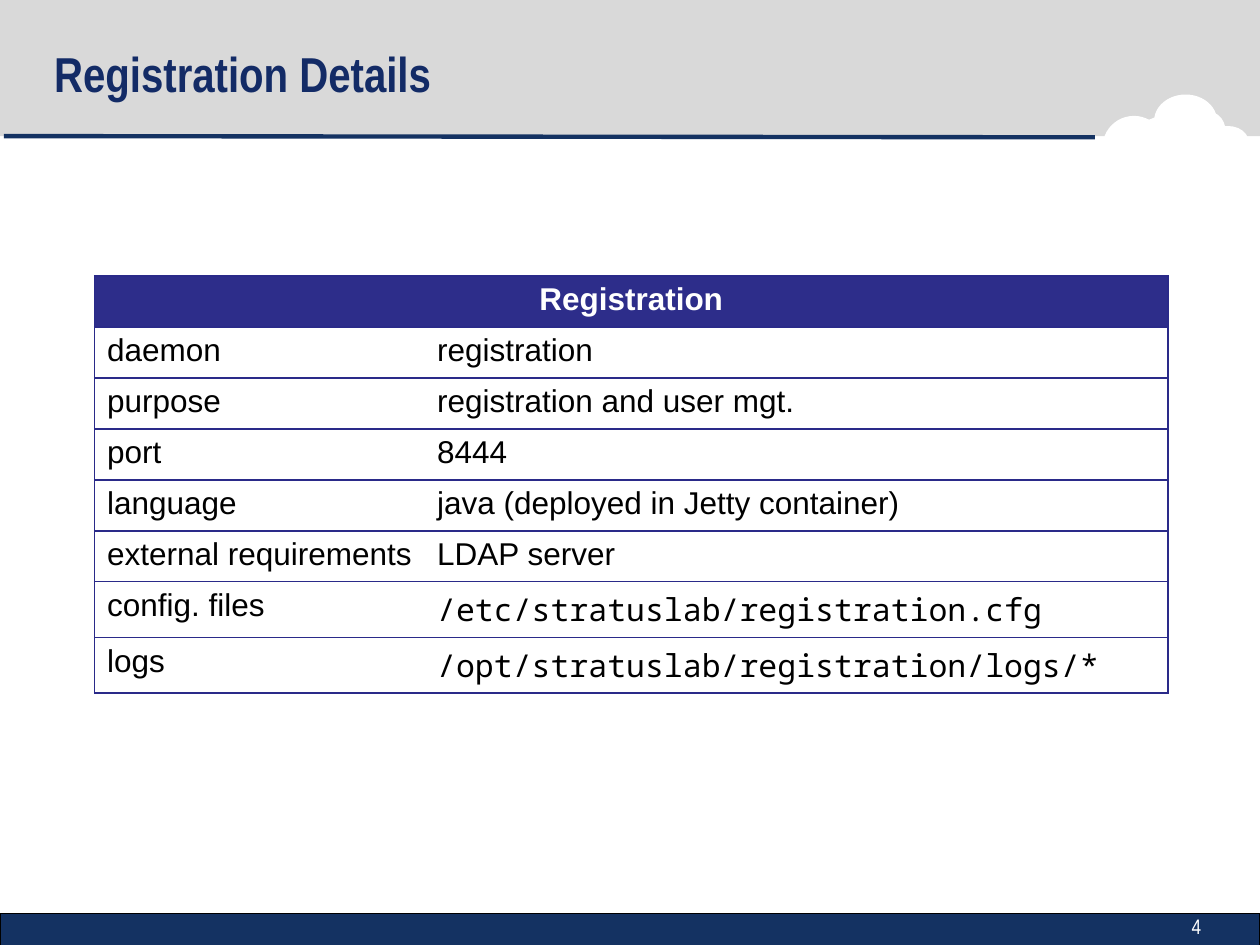
from lxml.etree import SubElement
from pptx import Presentation
from pptx.dml.color import RGBColor
from pptx.enum.shapes import MSO_CONNECTOR, MSO_SHAPE
from pptx.enum.text import MSO_ANCHOR, PP_ALIGN
from pptx.oxml.ns import qn
from pptx.util import Inches, Pt

COLORS = {
    "band": "D9D9D9",
    "cloud": "FFFFFF",
    "navy": "143262",
    "title": "132B66",
    "table": "2A2A89",
    "header": "2D2D8A",
    "white": "FFFFFF",
    "black": "000000",
}


def style_text(paragraph, font_name, size, color, bold=False):
    for span in paragraph.runs:
        span.font.name = font_name
        span.font.size = Pt(size)
        span.font.bold = bold
        span.font.color.rgb = RGBColor.from_string(COLORS[color])


def add_filled(page, preset, bounds, color):
    shape = page.shapes.add_shape(preset, *map(Inches, bounds))
    shape.shadow.inherit = False
    shape.fill.solid()
    shape.fill.fore_color.rgb = RGBColor.from_string(COLORS[color])
    shape.line.fill.background()
    return shape


deck = Presentation()
deck.slide_width, deck.slide_height = Inches(10), Inches(7.5)
page = deck.slides.add_slide(deck.slide_layouts[5])

add_filled(page, MSO_SHAPE.RECTANGLE, (0, 0, 10, 1.08), "band")
footer = add_filled(page, MSO_SHAPE.RECTANGLE, (0, 7.25, 10, 0.26), "navy")
footer.line.color.rgb = RGBColor.from_string(COLORS["black"])
footer.line.width = Pt(0.75)

cloud_puffs = [
    (9.48, 0.89, 0.25, 0.33),
    (9, 0.92, 0.5, 0.42),
    (8.75, 0.92, 0.5, 0.5),
    (9.58, 1, 0.33, 0.25),
    (9.16, 0.75, 0.5, 0.42),
]
for bounds in cloud_puffs:
    add_filled(page, MSO_SHAPE.OVAL, bounds, "cloud")

rule = page.shapes.add_connector(
    MSO_CONNECTOR.STRAIGHT, Inches(0.03), Inches(1.08), Inches(8.69), Inches(1.09)
)
rule.line.color.rgb = RGBColor.from_string(COLORS["navy"])
rule.line.width = Pt(2.5)
SubElement(rule.element.spPr, qn("a:effectLst"))

number_box = page.shapes.add_textbox(*map(Inches, (9.36, 7.2, 0.64, 0.3)))
number_box.text_frame.word_wrap = True
number_box.text_frame.text = "4"
style_text(number_box.text_frame.paragraphs[0], "Arial Narrow", 12, "white")

title = page.shapes.title
title.left, title.top, title.width, title.height = map(Inches, (0.33, 0.08, 8.33, 1))
title.text_frame.text = "Registration Details"
title.text_frame.vertical_anchor = MSO_ANCHOR.MIDDLE
title.text_frame.paragraphs[0].alignment = PP_ALIGN.LEFT
style_text(title.text_frame.paragraphs[0], "Arial Narrow", 28, "title", True)
page.shapes.element.append(title.element)

rows = [
    ("Registration", ""),
    ("daemon", "registration"),
    ("purpose", "registration and user mgt."),
    ("port", "8444"),
    ("language", "java (deployed in Jetty container)"),
    ("external requirements", "LDAP server"),
    ("config. files", "/etc/stratuslab/registration.cfg"),
    ("logs", "/opt/stratuslab/registration/logs/*"),
]
row_height = Inches(0.405)
frame = page.shapes.add_table(
    len(rows), 2, Inches(0.75), Inches(2.19), Inches(8.52), row_height * len(rows)
)
table = frame.table
table.first_row = True
table.horz_banding = False
table.columns[0].width, table.columns[1].width = Inches(2.62), Inches(5.9)
table.cell(0, 0).merge(table.cell(0, 1))

for row, values in enumerate(rows):
    table.rows[row].height = row_height
    header = row == 0
    for column, value in enumerate(values):
        cell = table.cell(row, column)
        properties = cell._tc.get_or_add_tcPr()
        inner_side = "lnL" if column else "lnR"
        for side in ("lnL", "lnR", "lnT", "lnB"):
            border = SubElement(properties, qn(f"a:{side}"), w=str(Pt(0.75)))
            if side == inner_side and not header:
                SubElement(border, qn("a:noFill"))
            else:
                fill = SubElement(border, qn("a:solidFill"))
                SubElement(fill, qn("a:srgbClr"), val=COLORS["table"])
        if header:
            cell.fill.solid()
            cell.fill.fore_color.rgb = RGBColor.from_string(COLORS["header"])
        else:
            cell.fill.background()
        if value:
            cell.text_frame.text = value
            para = cell.text_frame.paragraphs[0]
            para.alignment = PP_ALIGN.CENTER if header else PP_ALIGN.LEFT
            font_name = "Noto Sans Mono" if value.startswith("/") else "Arial"
            style_text(para, font_name, 18, "white" if header else "black", header)

deck.save("out.pptx")
